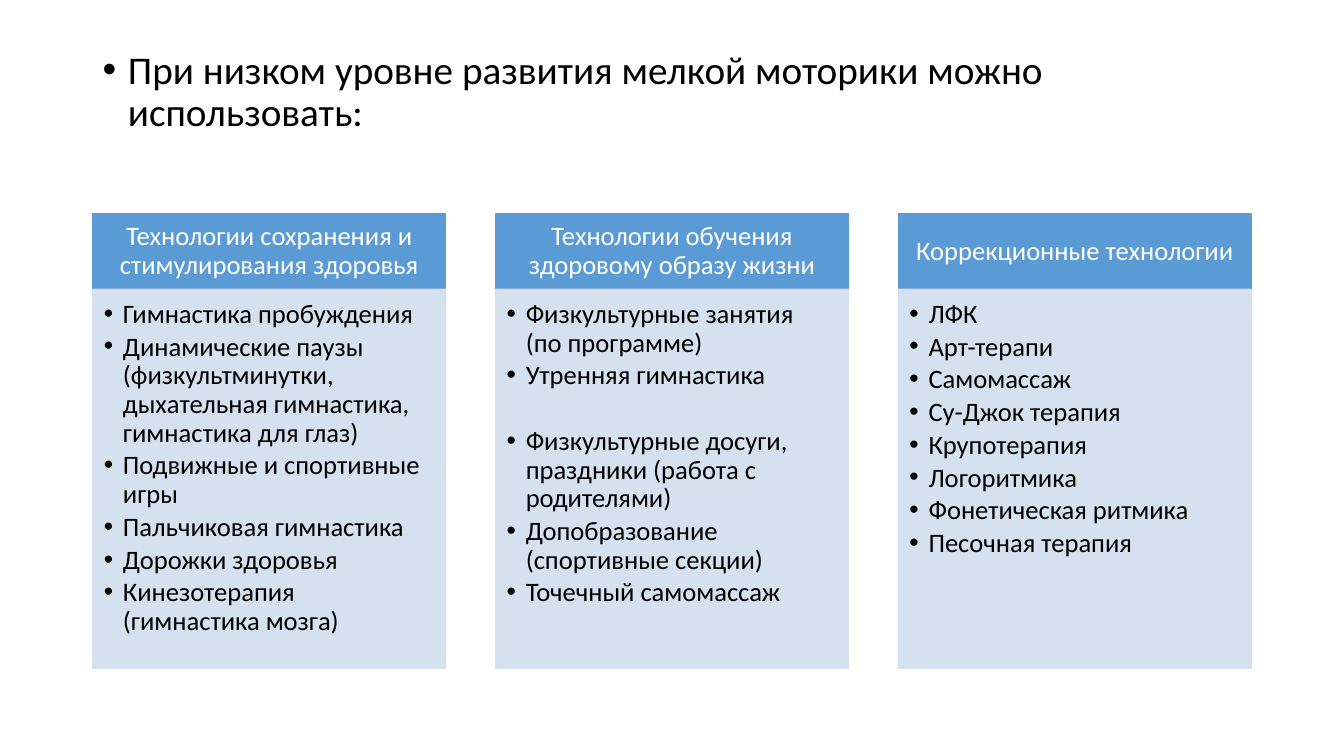
from lxml import etree
from pptx import Presentation, util as u
from pptx.dml.color import RGBColor
from pptx.enum import shapes, text
from pptx.oxml import ns

LEAD = "При низком уровне развития мелкой моторики можно использовать:"
COLS = [
    ("Технологии сохранения и стимулирования здоровья", [
        "Гимнастика пробуждения",
        "Динамические паузы (физкультминутки, дыхательная гимнастика, гимнастика для глаз)",
        "Подвижные и спортивные игры",
        "Пальчиковая гимнастика",
        "Дорожки здоровья",
        "Кинезотерапия (гимнастика мозга)"]),
    ("Технологии обучения здоровому образу жизни", [
        "Физкультурные занятия (по программе)",
        "Утренняя гимнастика",
        "Физкультурные досуги, праздники (работа с родителями)",
        "Допобразование (спортивные секции)",
        "Точечный самомассаж"]),
    ("Коррекционные технологии", [
        "ЛФК", "Арт-терапи", "Самомассаж", "Су-Джок терапия", "Крупотерапия",
        "Логоритмика", "Фонетическая ритмика", "Песочная терапия"]),
]
SPACED = {"Физкультурные досуги, праздники (работа с родителями)": 23.4}
WIDE, HIGH = 13.33, 7.5
SIDE, TOP, CARD = 0.92, 2.12, 3.5
HEAD, BODY = 0.75, 3.76
STEP = (WIDE - 2 * SIDE - CARD) / (len(COLS) - 1)
BLUE, PALE, WHITE, BLACK = "5B9BD5", "D2DEEF", "FFFFFF", "000000"
MID, LEFT = text.PP_ALIGN.CENTER, text.PP_ALIGN.LEFT
STYLE = {
    "lead": dict(pads=(0.1, 0.05, 0.1, 0.05), anchor=text.MSO_ANCHOR.TOP,
                 align=LEFT, size=28, color=BLACK, dent=0.25, after=0),
    "head": dict(pads=(0.15, 0.08, 0.15, 0.08), anchor=text.MSO_ANCHOR.MIDDLE,
                 align=MID, size=19, color=WHITE, dent=0, after=0),
    "body": dict(pads=(0.11, 0.11, 0.15, 0.17), anchor=text.MSO_ANCHOR.TOP,
                 align=LEFT, size=19, color=BLACK, dent=0.19, after=2.85),
}


def paint(code):
    return RGBColor.from_string(code)


def apply(item, vals):
    for key, val in vals.items():
        setattr(item, key, val)


def bullet(para, dent):
    props = para._p.get_or_add_pPr()
    props.set("marL", str(u.Inches(dent)))
    props.set("indent", str(-u.Inches(dent)))
    for tag, key, val in (("buFont", "typeface", "Arial"), ("buChar", "char", "•")):
        etree.SubElement(props, ns.qn("a:" + tag)).set(key, val)


def write(shape, lines, style):
    frame = shape.text_frame
    sides = ("margin_left", "margin_top", "margin_right", "margin_bottom")
    apply(frame, dict(zip(sides, map(u.Inches, style["pads"]))))
    apply(frame, dict(word_wrap=True, vertical_anchor=style["anchor"]))
    for num, line in enumerate(lines):
        para = frame.add_paragraph() if num else frame.paragraphs[0]
        if style["dent"]:
            bullet(para, style["dent"])
        apply(para, dict(alignment=style["align"], line_spacing=0.9,
                         space_before=u.Pt(SPACED.get(line, 0)),
                         space_after=u.Pt(style["after"])))
        run = para.add_run()
        run.text = line
        apply(run.font, dict(name="Calibri", size=u.Pt(style["size"])))
        run.font.color.rgb = paint(style["color"])


def block(slide, spot, color, alpha=100):
    box = slide.shapes.add_shape(shapes.MSO_SHAPE.RECTANGLE, *map(u.Inches, spot))
    box.shadow.inherit = False
    box.line.width = u.Pt(1)
    for fill in (box.fill, box.line.fill):
        fill.solid()
        fill.fore_color.rgb = paint(color)
    if alpha < 100:
        for tone in box._element.spPr.iter(ns.qn("a:srgbClr")):
            etree.SubElement(tone, ns.qn("a:alpha")).set("val", str(alpha * 1000))
    return box


def main():
    """Build the slide with a lead line and three titled lists."""
    deck = Presentation()
    apply(deck, dict(slide_width=u.Inches(WIDE), slide_height=u.Inches(HIGH)))
    slide = deck.slides.add_slide(deck.slide_layouts[6])
    spot = (SIDE, 0.45, WIDE - 2 * SIDE, 6.68)
    lead = slide.shapes.add_textbox(*map(u.Inches, spot))
    write(lead, [LEAD], STYLE["lead"])
    for num, (title, items) in enumerate(COLS):
        left = SIDE + num * STEP
        head = block(slide, (left, TOP, CARD, HEAD), BLUE)
        write(head, [title], STYLE["head"])
        body = block(slide, (left, TOP + HEAD, CARD, BODY), PALE, 90)
        write(body, items, STYLE["body"])
    deck.save("out.pptx")


if __name__ == "__main__":
    main()
